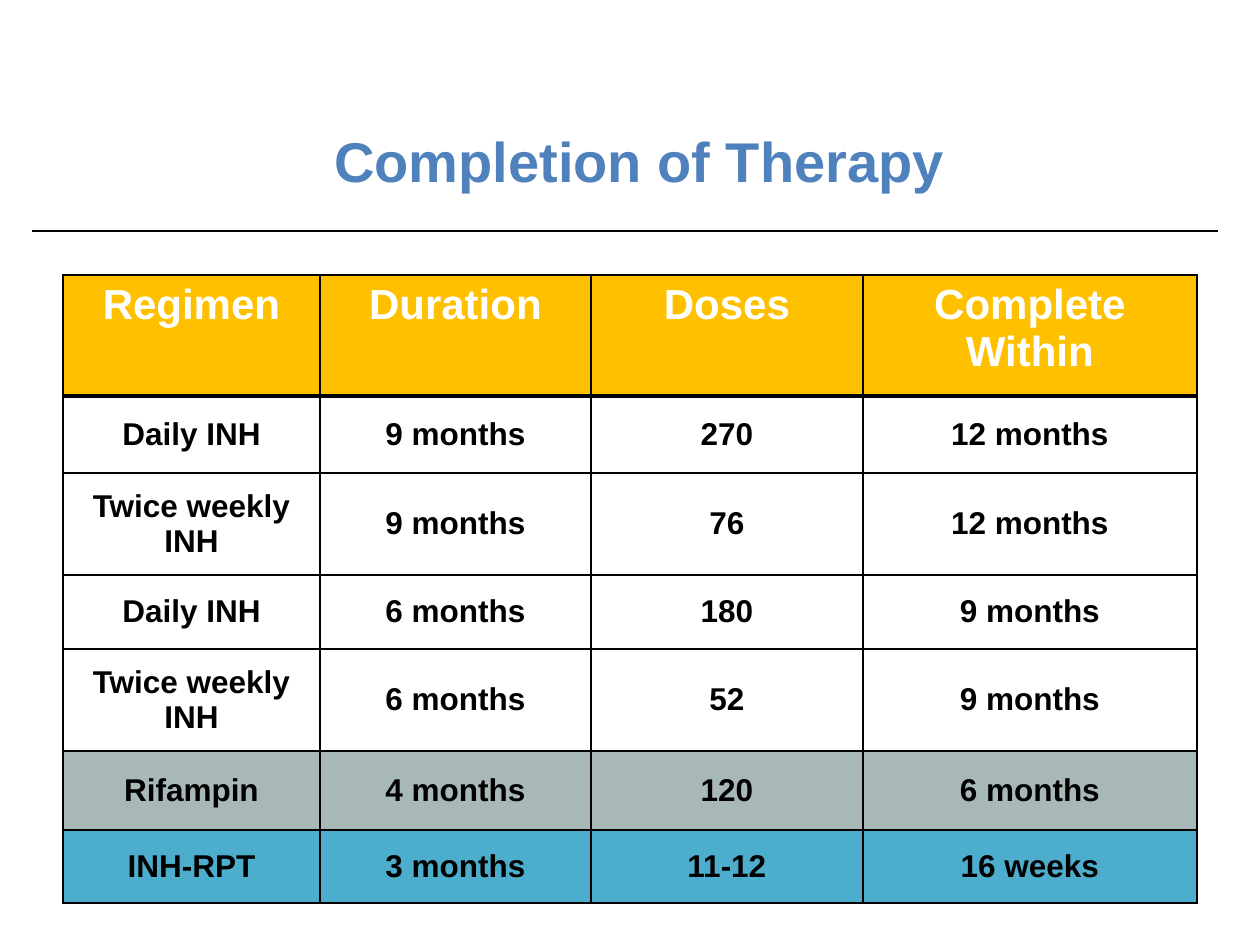
from pptx import Presentation
from pptx.dml.color import RGBColor
from pptx.enum.shapes import MSO_CONNECTOR
from pptx.enum.text import MSO_ANCHOR, PP_ALIGN
from pptx.util import Emu, Pt
from lxml.etree import SubElement
from pptx.oxml.ns import qn

PX = 914400 // 126
COLORS = {
    "title": "4F81BD", "line": "000000", "text": "000000", "header_text": "FFFFFF",
    "header": "FFC000", "plain": "FFFFFF", "gray": "A8B8B8", "blue": "4CAECC",
}


def style_text(tf, size, color):
    p = tf.paragraphs[0]
    p.alignment = PP_ALIGN.CENTER
    font = p.runs[0].font
    font.name, font.size, font.bold = "Arial", Pt(size), True
    font.color.rgb = RGBColor.from_string(COLORS[color])


def add_border(cell, side, width):
    ln = SubElement(cell._tc.get_or_add_tcPr(), qn(f"a:{side}"), w=str(Pt(width)))
    fill = SubElement(ln, qn("a:solidFill"))
    SubElement(fill, qn("a:srgbClr"), val=COLORS["line"])


prs = Presentation()
prs.slide_width, prs.slide_height = Emu(1260 * PX), Emu(945 * PX)
s = prs.slides.add_slide(prs.slide_layouts[6])

# Title
sp = s.shapes.add_textbox(53 * PX, 126 * PX, 1173 * PX, 68 * PX)
tf = sp.text_frame
tf.word_wrap = True
tf.vertical_anchor = MSO_ANCHOR.MIDDLE
tf.text = "Completion of Therapy"
style_text(tf, 32, "title")

# Regimen table
rows = [
    (121, "header", ["Regimen", "Duration", "Doses", "Complete Within"]),
    (77, "plain", ["Daily INH", "9 months", "270", "12 months"]),
    (102, "plain", ["Twice weekly INH", "9 months", "76", "12 months"]),
    (74, "plain", ["Daily INH", "6 months", "180", "9 months"]),
    (102, "plain", ["Twice weekly INH", "6 months", "52", "9 months"]),
    (79, "gray", ["Rifampin", "4 months", "120", "6 months"]),
    (73, "blue", ["INH-RPT", "3 months", "11-12", "16 weeks"]),
]
col_widths = [257, 271, 272, 334]
height = sum(row[0] for row in rows)
table = s.shapes.add_table(len(rows), len(col_widths), 63 * PX, 275 * PX,
                           sum(col_widths) * PX, height * PX).table
for col, width in zip(table.columns, col_widths):
    col.width = Emu(width * PX)

for i, (row_height, fill, texts) in enumerate(rows):
    table.rows[i].height = Emu(row_height * PX)
    for j, text in enumerate(texts):
        cell = table.cell(i, j)
        cell.text_frame.text = text
        if i == 0:
            style_text(cell.text_frame, 24, "header_text")
        else:
            style_text(cell.text_frame, 18, "text")
            cell.vertical_anchor = MSO_ANCHOR.MIDDLE
        # Borders come before the fill; a thick rule sits below the header
        add_border(cell, "lnL", 1)
        add_border(cell, "lnR", 1)
        add_border(cell, "lnT", 3 if i == 1 else 1)
        add_border(cell, "lnB", 3 if i == 0 else 1)
        cell.fill.solid()
        cell.fill.fore_color.rgb = RGBColor.from_string(COLORS[fill])

# Rule under the title
line = s.shapes.add_connector(MSO_CONNECTOR.STRAIGHT, 32 * PX, 231 * PX, 1218 * PX, 231 * PX)
line.line.width = Pt(1)
line.line.color.rgb = RGBColor.from_string(COLORS["line"])
SubElement(line._element.spPr, qn("a:effectLst"))

prs.save("out.pptx")
